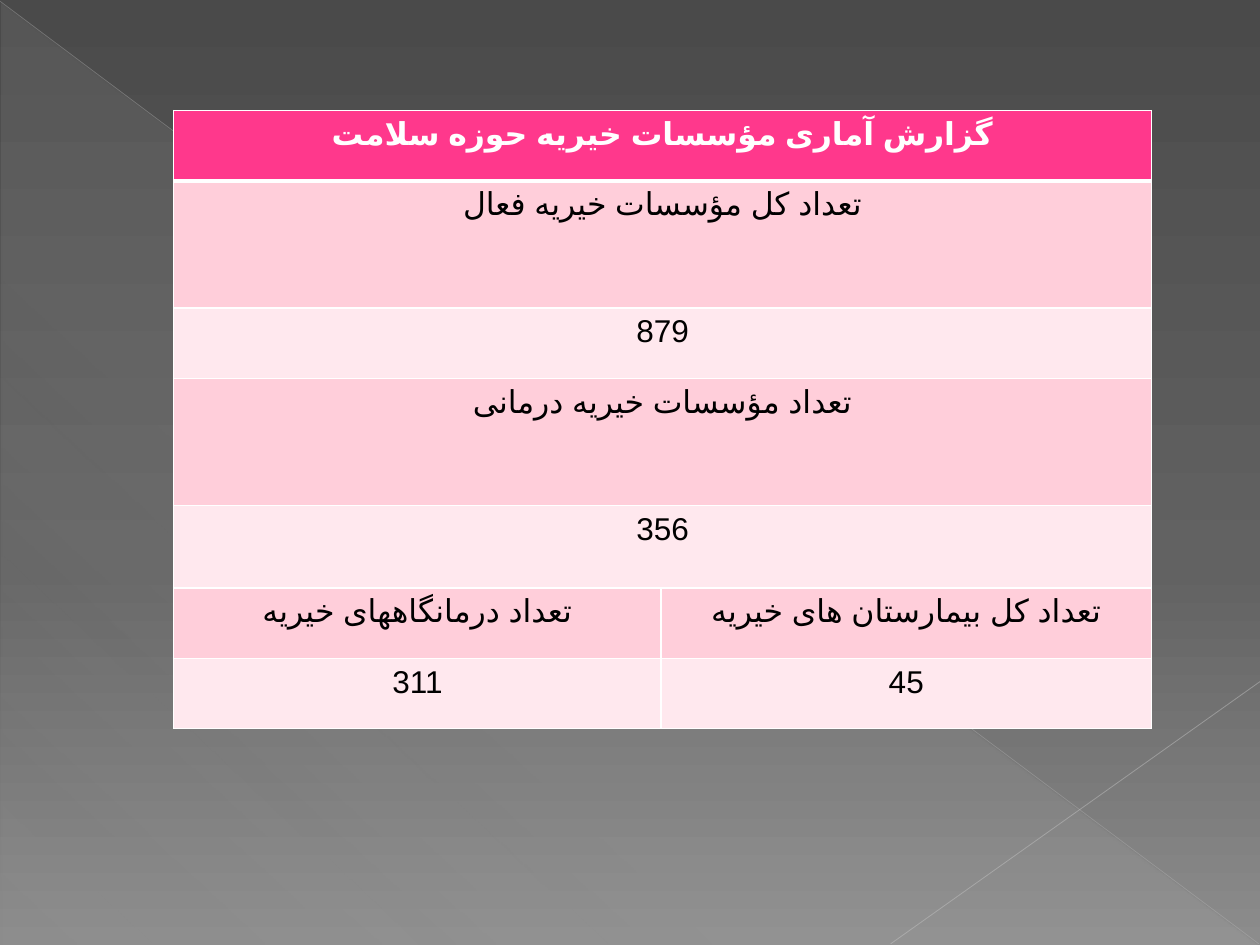
from dataclasses import dataclass

from lxml import etree
from pptx import Presentation
from pptx import util as u
from pptx.dml.color import RGBColor
from pptx.enum import shapes, text
from pptx.oxml import ns

FONT, PERSIAN_FONT = "League Spartan", "Arial"
WHITE, BLACK = "FFFFFF", "000000"
PINK, ROSE, BLUSH = "FF388C", "FFCEDA", "FFE8EE"


@dataclass
class Stop:
    position: int
    color: str
    opacity: int = 100


@dataclass
class Ray:
    start: tuple[float, float]
    end: tuple[float, float]
    color: str
    width: float
    opacity: int


@dataclass
class Row:
    height: float
    fill: str
    labels: list[str]
    header: bool = False


def rgb(color: str) -> RGBColor:
    return RGBColor.from_string(color)


def add_node(parent, tag: str, **attributes):
    node = etree.SubElement(parent, ns.qn(tag))
    for key, value in attributes.items():
        node.set(key, str(value))
    return node


def set_gradient(holder, stops: list[Stop], angle: int) -> None:
    """Replace the solid fill in holder by a linear gradient."""
    solid = holder.find(ns.qn("a:solidFill"))
    gradient = etree.Element(ns.qn("a:gradFill"), rotWithShape="1")
    stop_list = add_node(gradient, "a:gsLst")
    for stop in stops:
        mark = add_node(stop_list, "a:gs", pos=stop.position * 1000)
        tint = add_node(mark, "a:srgbClr", val=stop.color)
        add_node(tint, "a:alpha", val=stop.opacity * 1000)
    add_node(gradient, "a:lin", ang=angle * 60000, scaled=0)
    holder.replace(solid, gradient)


def draw_ray(slide, ray: Ray) -> None:
    points = [u.Pt(value) for value in (*ray.start, *ray.end)]
    line = slide.shapes.add_connector(shapes.MSO_CONNECTOR.STRAIGHT, *points)
    line.line.color.rgb = rgb(ray.color)
    line.line.width = u.Pt(ray.width)
    properties = line._element.spPr
    tint = properties.find(".//" + ns.qn("a:srgbClr"))
    add_node(tint, "a:alpha", val=ray.opacity * 1000)
    add_node(properties, "a:effectLst")


def set_borders(cell, bottom: float, top: float) -> None:
    widths = {"a:lnL": 1, "a:lnR": 1, "a:lnT": top, "a:lnB": bottom}
    properties = cell._tc.get_or_add_tcPr()
    for index, (side, width) in enumerate(widths.items()):
        edge = add_node(properties, side, w=int(u.Pt(width)))
        add_node(add_node(edge, "a:solidFill"), "a:srgbClr", val=WHITE)
        properties.insert(index, edge)


def write_label(cell, label: str, row: Row) -> None:
    """Centre a right-to-left label, with a complex-script font for Persian."""
    cell.text_frame.text = label
    paragraph = cell.text_frame.paragraphs[0]
    paragraph.alignment = text.PP_ALIGN.CENTER
    paragraph._p.get_or_add_pPr().set("rtl", "1")
    run = paragraph.runs[0]
    run.font.name, run.font.size, run.font.bold = FONT, u.Pt(18), row.header
    run.font.color.rgb = rgb(WHITE if row.header else BLACK)
    properties = run._r.get_or_add_rPr()
    properties.set("lang", "fa-IR")
    add_node(properties, "a:cs", typeface=PERSIAN_FONT)


def draw_table(slide, left: float, top: float, widths: list[float], rows: list[Row]) -> None:
    height = sum(row.height for row in rows)
    frame = slide.shapes.add_table(len(rows), len(widths), u.Pt(left), u.Pt(top),
                                   u.Pt(sum(widths)), u.Pt(height))
    table = frame.table
    table.first_row = table.horz_banding = False
    for column, width in zip(table.columns, widths):
        column.width = u.Pt(width)
    for index, row in enumerate(rows):
        table.rows[index].height = u.Pt(row.height)
        cells = list(table.rows[index].cells)
        below_header = index > 0 and rows[index - 1].header
        for cell in cells:
            cell.fill.solid()
            cell.fill.fore_color.rgb = rgb(row.fill)
            set_borders(cell, 3 if row.header else 1, 3 if below_header else 1)
        if len(row.labels) == 1:
            cells[0].merge(cells[-1])
        for cell, label in zip(cells, row.labels):
            write_label(cell, label, row)


RAYS = [
    Ray((0, 0.7), (719.3, 539.3), "BFBFBF", 0.39, 35),
    Ray((720, 389.5), (509, 539.3), "C6C6C6", 0.47, 45),
]
ROWS = [
    Row(40.2, PINK, ["گزارش آماری مؤسسات خیریه حوزه سلامت"], header=True),
    Row(72.6, ROSE, ["تعداد کل مؤسسات خیریه فعال"]),
    Row(40.2, BLUSH, ["879"]),
    Row(72.6, ROSE, ["تعداد مؤسسات خیریه درمانی"]),
    Row(47.2, BLUSH, ["356"]),
    Row(40.2, ROSE, ["تعداد درمانگاههای خیریه", "تعداد کل بیمارستان های خیریه"]),
    Row(40.2, BLUSH, ["311", "45"]),
]


def main() -> None:
    deck = Presentation()
    deck.slide_width, deck.slide_height = u.Pt(720), u.Pt(540)
    slide = deck.slides.add_slide(deck.slide_layouts[6])

    # Background
    slide.background.fill.solid()
    set_gradient(slide.element.find(".//" + ns.qn("p:bgPr")),
                 [Stop(0, "4A4A4A"), Stop(60, "626262"), Stop(100, "8C8C8C")], 90)

    # Pale corner and its crossing rays
    corner = slide.shapes.add_shape(shapes.MSO_SHAPE.RIGHT_TRIANGLE, u.Pt(0.7), u.Pt(1.4),
                                    u.Pt(718.6), u.Pt(538.6))
    corner.shadow.inherit = False
    corner.line.fill.background()
    corner.fill.solid()
    set_gradient(corner._element.spPr,
                 [Stop(0, "D2D2D2", 10), Stop(70, "D2D2D2", 8), Stop(100, "D2D2D2", 1)], 133)
    for ray in RAYS:
        draw_ray(slide, ray)

    # Charity statistics
    draw_table(slide, 99.2, 63.2, [278.6, 280.1], ROWS)
    deck.save("out.pptx")


if __name__ == "__main__":
    main()
